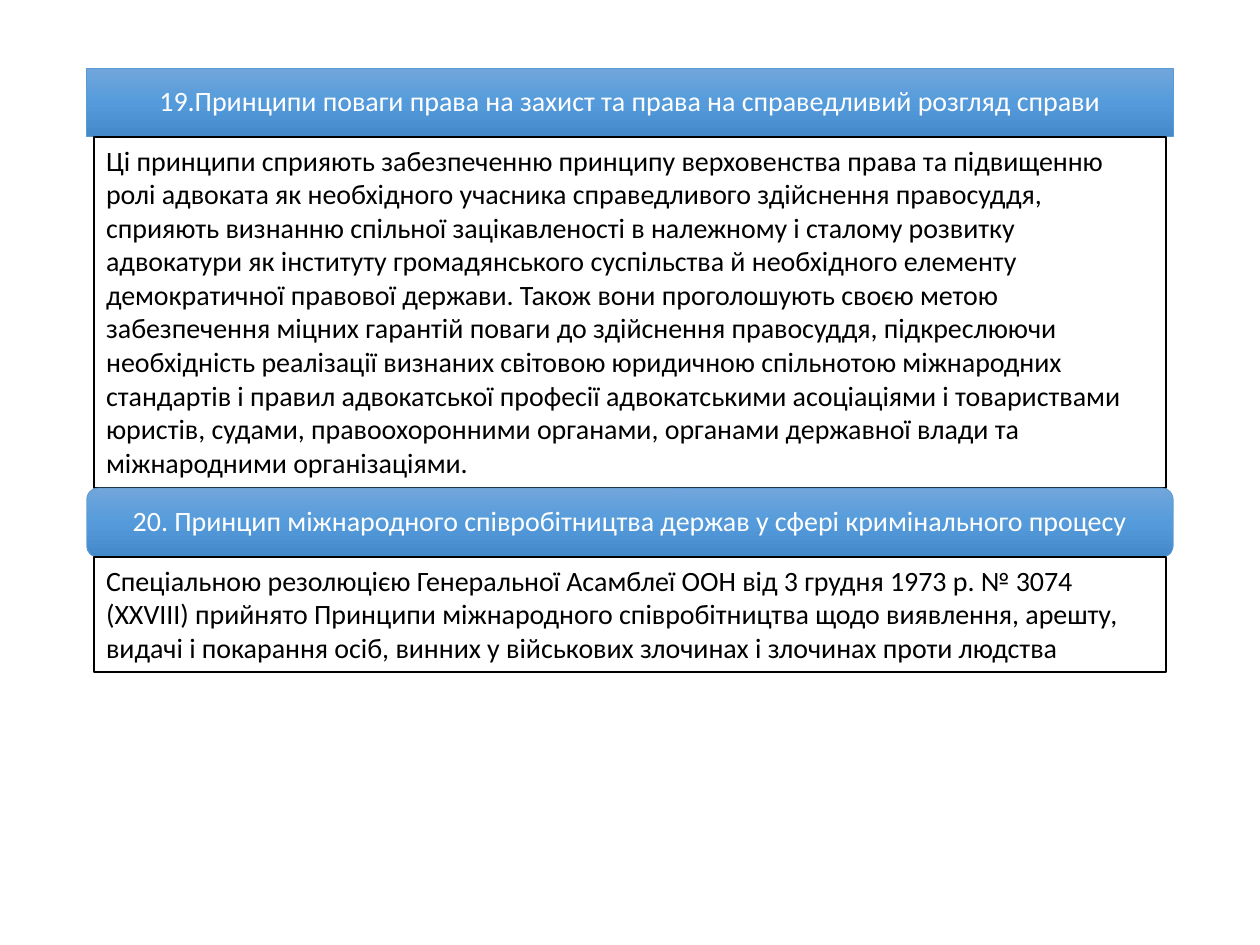
from copy import deepcopy

from lxml import etree
from pptx import Presentation
from pptx.dml.color import RGBColor
from pptx.enum import shapes, text
from pptx.oxml import ns
from pptx.util import Cm, Pt

HEADING_GRADIENT = ["71A6DB", "559BDB", "448ACA"]
SLIDE_WIDTH = 25.4
HEADING_WIDTH, HEADING_HEIGHT = 21.9, 1.39
BODY_WIDTH = 21.62

PRINCIPLES = [
    ("19.Принципи поваги права на захист та права на справедливий розгляд справи",
     "Ці принципи сприяють забезпеченню принципу верховенства права та підвищенню "
     "ролі адвоката як необхідного учасника справедливого здійснення правосуддя, "
     "сприяють визнанню спільної зацікавленості в належному і сталому розвитку "
     "адвокатури як інституту громадянського суспільства й необхідного елементу "
     "демократичної правової держави. Також вони проголошують своєю метою "
     "забезпечення міцних гарантій поваги до здійснення правосуддя, підкреслюючи "
     "необхідність реалізації визнаних світовою юридичною спільнотою міжнародних "
     "стандартів і правил адвокатської професії адвокатськими асоціаціями і товариствами "
     "юристів, судами, правоохоронними органами, органами державної влади та "
     "міжнародними організаціями.",
     7.08),
    ("20. Принцип міжнародного співробітництва держав у сфері кримінального процесу",
     "Спеціальною резолюцією Генеральної Асамблеї ООН від 3 грудня 1973 р. № 3074 "
     "(XXVIII) прийнято Принципи міжнародного співробітництва щодо виявлення, арешту, "
     "видачі і покарання осіб, винних у військових злочинах і злочинах проти людства",
     2.32),
]


def color(value):
    return RGBColor.from_string(value)


def write(shape, content, font_color):
    """Put one wrapped 16 pt paragraph into the shape and return it."""
    frame = shape.text_frame
    frame.text = content
    frame.word_wrap = True
    paragraph = frame.paragraphs[0]
    font = paragraph.runs[0].font
    font.name, font.size = "Calibri", Pt(16)
    font.color.rgb = color(font_color)
    return paragraph


presentation = Presentation()
presentation.slide_width, presentation.slide_height = Cm(SLIDE_WIDTH), Cm(19.05)
slide = presentation.slides.add_slide(presentation.slide_layouts[5])

top = 1.37
for number, (heading_text, body_text, body_height) in enumerate(PRINCIPLES):
    # Heading: the first one is the slide title, given the same rounded outline
    place = (Cm((SLIDE_WIDTH - HEADING_WIDTH) / 2), Cm(top),
             Cm(HEADING_WIDTH), Cm(HEADING_HEIGHT))
    if number == 0:
        heading = slide.shapes.title
        heading.left, heading.top, heading.width, heading.height = place
        geometry = etree.Element(ns.qn("a:prstGeom"), prst="flowChartAlternateProcess")
        etree.SubElement(geometry, ns.qn("a:avLst"))
        heading.element.spPr.insert(1, geometry)
    else:
        heading = slide.shapes.add_shape(
            shapes.MSO_SHAPE.FLOWCHART_ALTERNATE_PROCESS, *place)
        heading.shadow.inherit = False

    heading.fill.gradient()
    heading.fill.gradient_angle = 270
    stop_list = heading.element.spPr.find(ns.qn("a:gradFill")).find(ns.qn("a:gsLst"))
    stop_list.insert(1, deepcopy(stop_list[0]))
    for index, (stop, value) in enumerate(
            zip(heading.fill.gradient_stops, HEADING_GRADIENT)):
        stop.position = index / 2
        stop.color.rgb = color(value)
    heading.line.color.rgb = color("5B9BD5")
    heading.line.width = Pt(0.5)

    paragraph = write(heading, heading_text, "FFFFFF")
    paragraph.alignment = text.PP_ALIGN.CENTER
    paragraph.line_spacing = 0.9
    heading.text_frame.vertical_anchor = text.MSO_ANCHOR.MIDDLE
    heading.text_frame.auto_size = text.MSO_AUTO_SIZE.NONE
    top += HEADING_HEIGHT

    # Explanation directly below its heading
    body = slide.shapes.add_textbox(Cm((SLIDE_WIDTH - BODY_WIDTH) / 2), Cm(top),
                                    Cm(BODY_WIDTH), Cm(body_height))
    body.fill.solid()
    body.fill.fore_color.rgb = color("FFFFFF")
    body.line.color.rgb = color("000000")
    body.line.width = Pt(1)
    write(body, body_text, "000000")
    body.text_frame.auto_size = text.MSO_AUTO_SIZE.SHAPE_TO_FIT_TEXT
    top += body_height

presentation.save("out.pptx")
